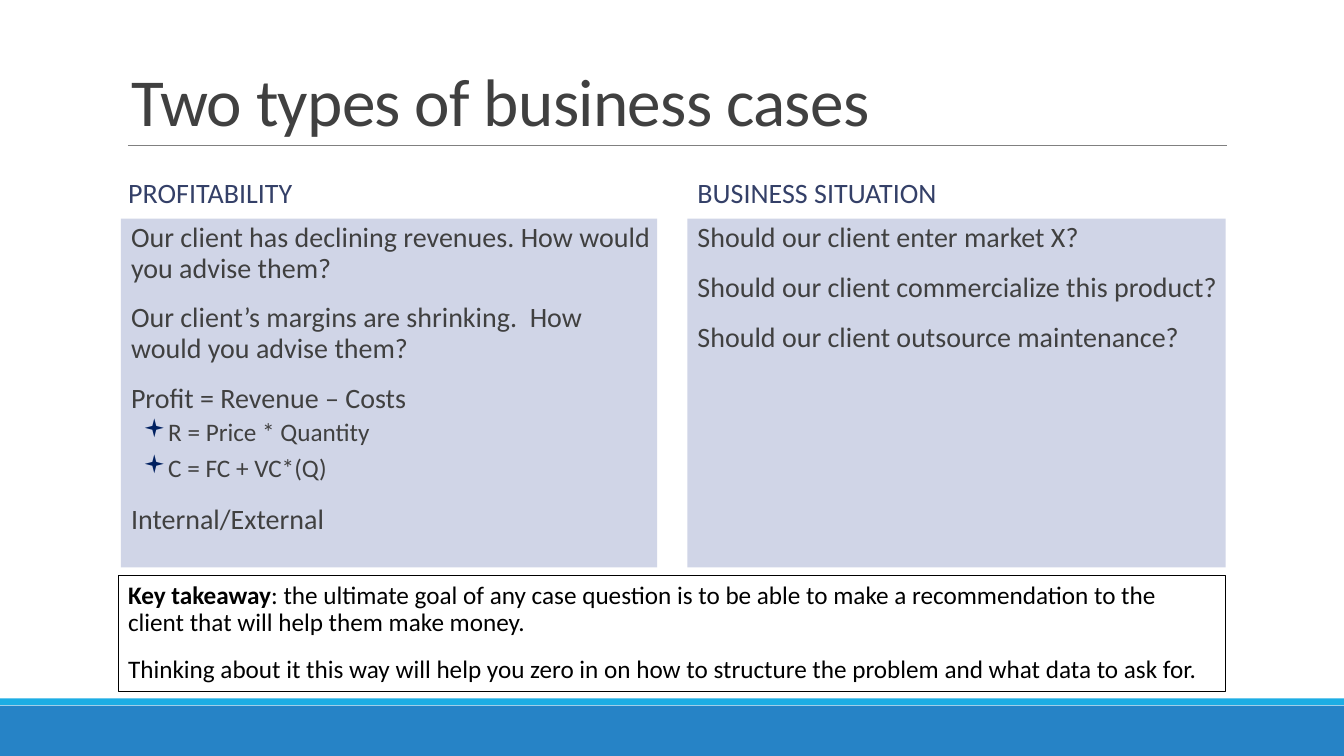
from lxml.etree import SubElement
from pptx import Presentation
from pptx.dml.color import RGBColor
from pptx.enum.shapes import MSO_CONNECTOR as Connector, MSO_SHAPE as Shape
from pptx.enum.text import MSO_ANCHOR as Anchor, MSO_AUTO_SIZE as AutoSize, PP_ALIGN as Align
from pptx.oxml.ns import qn
from pptx.util import Pt

COMPARISON_LAYOUT = 3 + 1
BODY_TOP, BODY_HEIGHT = 156.2, 249.1
HEADING_TOP, HEADING_HEIGHT = 109.4, 58.3
DARK_GREY, NAVY, PANEL_FILL = "404040", "344068", "D0D5E7"

PROFITABILITY = [
    ("Our client has declining revenues. How would you advise them?", 0),
    ("Our client’s margins are shrinking.  How would you advise them?", 0),
    ("Profit = Revenue – Costs", 0),
    ("R = Price * Quantity", 1),
    ("C = FC + VC*(Q)", 1),
    ("Internal/External", 0),
]
BUSINESS_SITUATION = [
    ("Should our client enter market X?", 0),
    ("Should our client commercialize this product?", 0),
    ("Should our client outsource maintenance?", 0),
]
TAKEAWAY = ": the ultimate goal of any case question is to be able to make a recommendation to the client that will help them make money."
ADVICE = "Thinking about it this way will help you zero in on how to structure the problem and what data to ask for."


def color(hex_string):
    return RGBColor.from_string(hex_string)


def place(shape, left, top, width, height):
    shape.left, shape.top = Pt(left), Pt(top)
    shape.width, shape.height = Pt(width), Pt(height)


def prepare_frame(shape, anchor, side=7.2):
    frame = shape.text_frame
    frame.word_wrap = True
    frame.auto_size = AutoSize.NONE
    frame.vertical_anchor = anchor
    frame.margin_left = frame.margin_right = Pt(side)
    frame.margin_top = frame.margin_bottom = Pt(3.6)
    return frame


def add_text(paragraph, text, size=20, fill=DARK_GREY, bold=False):
    run = paragraph.add_run()
    run.text = text
    font = run.font
    font.name, font.size, font.bold = "Calibri", Pt(size), bold
    font.color.rgb = color(fill)
    return run


def next_paragraph(frame, before=12, after=2, line=0.9):
    first = frame.paragraphs[0]
    paragraph = frame.add_paragraph() if first.runs else first
    paragraph.alignment = Align.LEFT
    paragraph.line_spacing = line
    paragraph.space_before, paragraph.space_after = Pt(before), Pt(after)
    return paragraph


def set_bullet(paragraph, left, hanging=0, character=None):
    properties = paragraph._p.get_or_add_pPr()
    properties.set("marL", str(Pt(left)))
    properties.set("indent", str(-Pt(hanging)))
    if character is None:
        SubElement(properties, qn("a:buNone"))
        return
    bullet_color = SubElement(properties, qn("a:buClr"))
    SubElement(bullet_color, qn("a:srgbClr"), val="002060")
    SubElement(properties, qn("a:buFont"), typeface="Wingdings")
    SubElement(properties, qn("a:buChar"), char=character)


def add_box(slide, left, top, width, height, fill=None, line=None):
    box = slide.shapes.add_shape(Shape.RECTANGLE, Pt(left), Pt(top), Pt(width), Pt(height))
    box.shadow.inherit = False
    if fill:
        box.fill.solid()
        box.fill.fore_color.rgb = color(fill)
    else:
        box.fill.background()
    if line:
        box.line.color.rgb = color(line)
        box.line.width = Pt(0.75)
    else:
        box.line.fill.background()
    return box


def add_rule(slide, left, right, top):
    rule = slide.shapes.add_connector(Connector.STRAIGHT, Pt(left), Pt(top), Pt(right), Pt(top))
    rule.line.color.rgb = color("808080")
    rule.line.width = Pt(0.5)
    SubElement(rule._element.spPr, qn("a:effectLst"))


def fill_title(title, text):
    place(title, 86.4, 22.3, 792, 81.4)
    paragraph = next_paragraph(prepare_frame(title, Anchor.BOTTOM), 0, 0, 0.85)
    run = add_text(paragraph, text, size=48)
    run.font._element.set("spc", "-50")


def fill_heading(heading, left, width, text):
    place(heading, left, HEADING_TOP, width, HEADING_HEIGHT)
    paragraph = next_paragraph(prepare_frame(heading, Anchor.MIDDLE))
    set_bullet(paragraph, 0)
    add_text(paragraph, text, fill=NAVY)


def fill_panel(panel, left, width, items):
    place(panel, left, BODY_TOP, width, BODY_HEIGHT)
    panel.fill.solid()
    panel.fill.fore_color.rgb = color(PANEL_FILL)
    frame = prepare_frame(panel, Anchor.TOP, side=0)
    for text, level in items:
        if level:
            paragraph = next_paragraph(frame, before=2, after=4)
            paragraph.level = level
            set_bullet(paragraph, 30.2, 14.4, "▪")
            add_text(paragraph, text, size=18)
        else:
            paragraph = next_paragraph(frame)
            set_bullet(paragraph, 7.2)
            add_text(paragraph, text)


def add_takeaway(slide):
    box = add_box(slide, 84.4, 411, 790.8, 83, line="000000")
    frame = prepare_frame(box, Anchor.MIDDLE)
    paragraph = next_paragraph(frame)
    add_text(paragraph, "Key takeaway", size=18, fill="000000", bold=True)
    add_text(paragraph, TAKEAWAY, size=18, fill="000000")
    add_text(next_paragraph(frame), ADVICE, size=18, fill="000000")


def main():
    presentation = Presentation()
    presentation.slide_width, presentation.slide_height = Pt(960), Pt(540)
    slide = presentation.slides.add_slide(presentation.slide_layouts[COMPARISON_LAYOUT])
    title, left_heading, left_panel, right_heading, right_panel = slide.placeholders

    # Footer bands and title rule
    add_box(slide, 0, 504, 960, 36, fill="2683C6")
    add_box(slide, 0, 498.8, 960, 5, fill="1CADE4")
    add_rule(slide, 91.4, 876.2, 103.9)

    # Title and the two columns
    fill_title(title, "Two types of business cases")
    fill_heading(left_heading, 84.4, 348.5, "PROFITABILITY")
    fill_panel(left_panel, 86.4, 383, PROFITABILITY)
    fill_heading(right_heading, 491, 349.9, "BUSINESS SITUATION")
    fill_panel(right_panel, 491, 384.5, BUSINESS_SITUATION)

    # Conclusion
    add_takeaway(slide)
    presentation.save("out.pptx")


if __name__ == "__main__":
    main()
